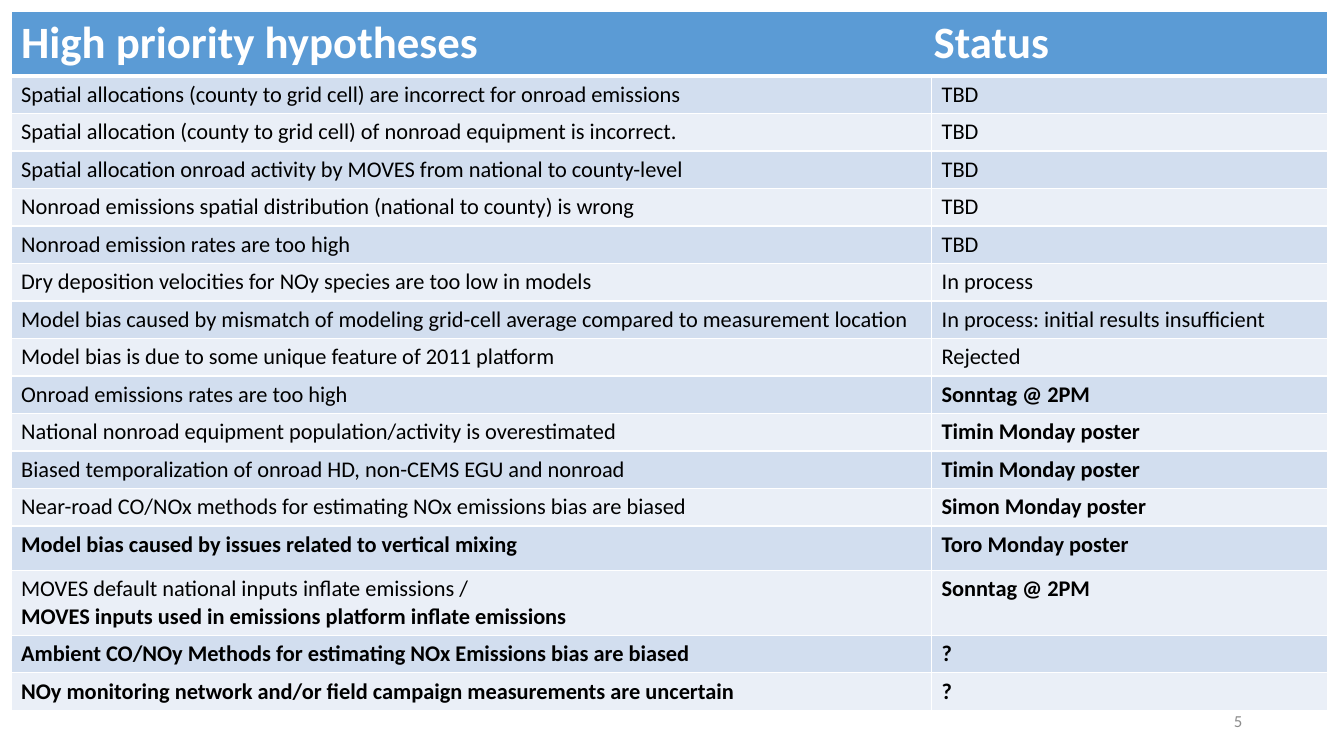
from lxml.etree import SubElement
from pptx import Presentation
from pptx.dml.color import RGBColor
from pptx.enum.text import MSO_ANCHOR, PP_ALIGN
from pptx.oxml.ns import qn
from pptx.util import Inches, Pt

COLORS = {"header": "5B9BD5", "odd": "D2DEEF", "even": "EAEFF7",
          "white": "FFFFFF", "black": "000000", "gray": "8C8C8C"}
FONT = "Calibri"
COLUMN_WIDTHS = [9.13, 3.93]
HEADER_HEIGHT, ROW_HEIGHT, TALL_HEIGHT = 0.64, 0.36, 0.44
TALL_ROWS = {13, 14}
STATUS_TAB = 9.05
HEADER = "High priority hypotheses\tStatus"

# Each row holds the hypothesis lines, then the status; True marks bold text.
HYPOTHESES = [
    ([("Spatial allocations (county to grid cell) are incorrect for onroad emissions", False)], ("TBD", False)),
    ([("Spatial allocation (county to grid cell) of nonroad equipment is incorrect.", False)], ("TBD", False)),
    ([("Spatial allocation onroad activity by MOVES from national to county-level", False)], ("TBD", False)),
    ([("Nonroad emissions spatial distribution (national to county) is wrong", False)], ("TBD", False)),
    ([("Nonroad emission rates are too high", False)], ("TBD", False)),
    ([("Dry deposition velocities for NOy species are too low in models", False)], ("In process", False)),
    ([("Model bias caused by mismatch of modeling grid-cell average compared to measurement location", False)],
     ("In process: initial results insufficient", False)),
    ([("Model bias is due to some unique feature of 2011 platform", False)], ("Rejected", False)),
    ([("Onroad emissions rates are too high", False)], ("Sonntag @ 2PM", True)),
    ([("National nonroad equipment population/activity is overestimated", False)], ("Timin Monday poster", True)),
    ([("Biased temporalization of onroad HD, non-CEMS EGU and nonroad", False)], ("Timin Monday poster", True)),
    ([("Near-road CO/NOx methods for estimating NOx emissions bias are biased", False)],
     ("Simon Monday poster", True)),
    ([("Model bias caused by issues related to vertical mixing", True)], ("Toro Monday poster", True)),
    ([("MOVES default national inputs inflate emissions /", False),
      ("MOVES inputs used in emissions platform inflate emissions", True)], ("Sonntag @ 2PM", True)),
    ([("Ambient CO/NOy Methods for estimating NOx Emissions bias are biased", True)], ("?", True)),
    ([("NOy monitoring network and/or field campaign measurements are uncertain", True)], ("?", True)),
]


def color(name):
    """Return the named colour."""
    return RGBColor.from_string(COLORS[name])


def format_paragraph(paragraph, size, color_name, bold=False):
    """Set the font of every run in a paragraph."""
    for run in paragraph.runs:
        run.font.name = FONT
        run.font.size = Pt(size)
        run.font.bold = bold
        run.font.color.rgb = color(color_name)


def add_borders(cell, top=1, bottom=1):
    """Draw white lines around a cell, with widths in points."""
    properties = cell._tc.get_or_add_tcPr()
    for side, width in (("L", 1), ("R", 1), ("T", top), ("B", bottom)):
        line = SubElement(properties, qn(f"a:ln{side}"), w=str(Pt(width)))
        fill = SubElement(line, qn("a:solidFill"))
        SubElement(fill, qn("a:srgbClr"), val=COLORS["white"])


def fill_cell(cell, color_name):
    """Give a cell a solid fill."""
    cell.fill.solid()
    cell.fill.fore_color.rgb = color(color_name)


def add_tab(paragraph, position):
    """Add a left tab stop to a paragraph."""
    tabs = SubElement(paragraph._p.get_or_add_pPr(), qn("a:tabLst"))
    SubElement(tabs, qn("a:tab"), pos=str(Inches(position)), algn="l")


def write_header(table):
    """Fill the merged header row."""
    for cell in table.rows[0].cells:
        add_borders(cell, bottom=3)
        fill_cell(cell, "header")
    header = table.cell(0, 0)
    header.merge(table.cell(0, 1))
    header.text_frame.text = HEADER
    paragraph = header.text_frame.paragraphs[0]
    add_tab(paragraph, STATUS_TAB)
    format_paragraph(paragraph, 32, "white", bold=True)


def write_cell(cell, lines, row):
    """Fill a body cell with lines of plain or bold text."""
    add_borders(cell, top=3 if row == 1 else 1)
    fill_cell(cell, "odd" if row % 2 else "even")
    cell.text_frame.text = "\n".join(text for text, bold in lines)
    for paragraph, (text, bold) in zip(cell.text_frame.paragraphs, lines):
        format_paragraph(paragraph, 16, "black", bold)


def add_hypotheses_table(slide):
    """Add the table of hypotheses and their status."""
    heights = [HEADER_HEIGHT] + [
        TALL_HEIGHT if row in TALL_ROWS else ROW_HEIGHT
        for row in range(1, len(HYPOTHESES) + 1)]
    table = slide.shapes.add_table(
        len(heights), len(COLUMN_WIDTHS), Inches(0.11), Inches(0.11),
        Inches(sum(COLUMN_WIDTHS)), Inches(sum(heights))).table
    for column, width in zip(table.columns, COLUMN_WIDTHS):
        column.width = Inches(width)
    for row, height in zip(table.rows, heights):
        row.height = Inches(height)
    write_header(table)
    for row, (hypothesis, status) in enumerate(HYPOTHESES, 1):
        write_cell(table.cell(row, 0), hypothesis, row)
        write_cell(table.cell(row, 1), [status], row)


def add_page_number(slide, number):
    """Add the page number at the bottom right."""
    box = slide.shapes.add_textbox(Inches(9.42), Inches(6.95), Inches(3), Inches(0.4))
    frame = box.text_frame
    frame.word_wrap = True
    frame.vertical_anchor = MSO_ANCHOR.MIDDLE
    frame.text = number
    paragraph = frame.paragraphs[0]
    paragraph.alignment = PP_ALIGN.RIGHT
    format_paragraph(paragraph, 12, "gray")


def main():
    """Build and save the slide."""
    presentation = Presentation()
    presentation.slide_width = Inches(13.33)
    presentation.slide_height = Inches(7.5)
    slide = presentation.slides.add_slide(presentation.slide_layouts[6])
    add_hypotheses_table(slide)
    add_page_number(slide, "5")
    presentation.save("out.pptx")


if __name__ == "__main__":
    main()
